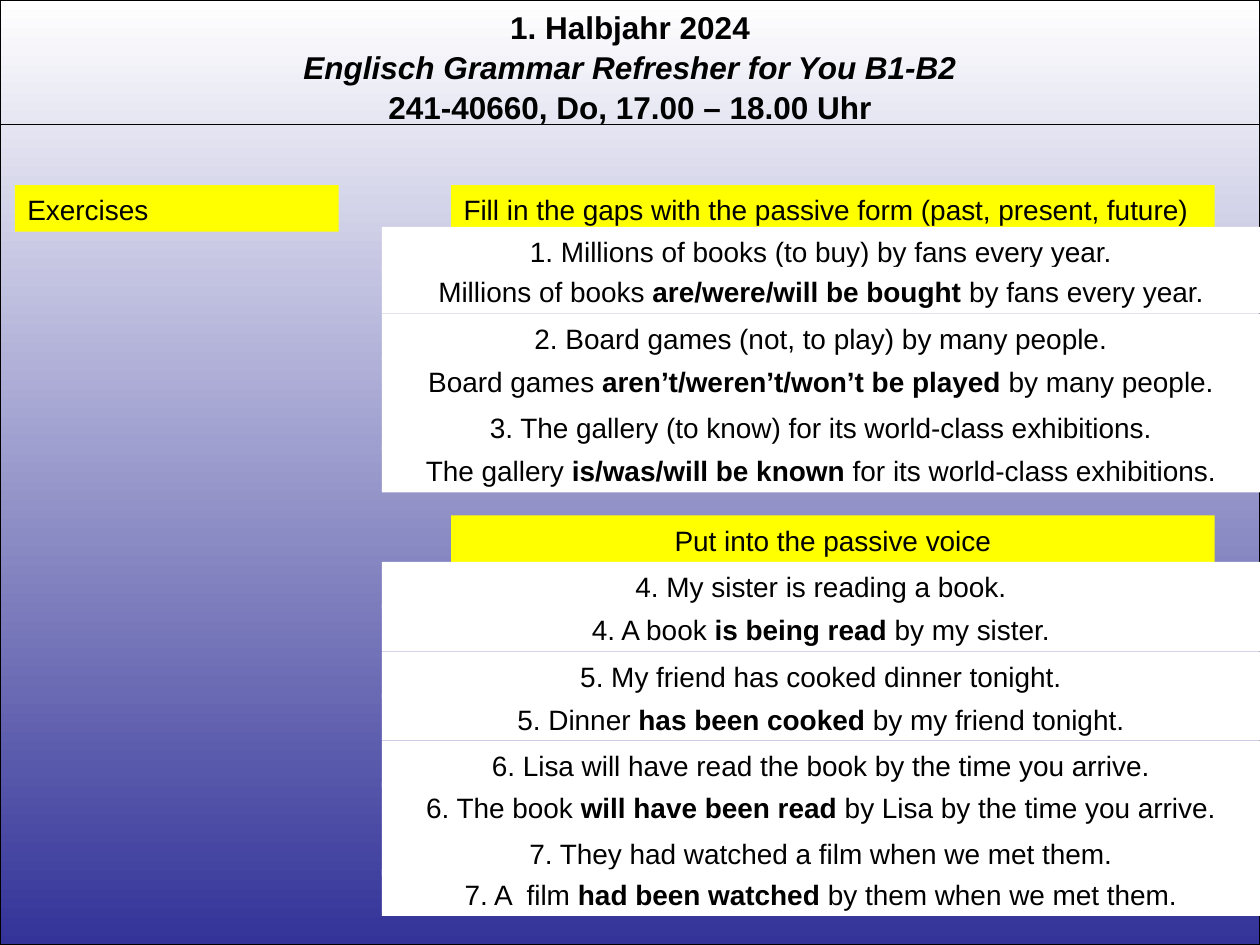
from dataclasses import dataclass
from lxml import etree
from pptx import Presentation
from pptx.dml.color import RGBColor
from pptx.enum.shapes import MSO_CONNECTOR, MSO_SHAPE
from pptx.enum.text import MSO_ANCHOR, MSO_AUTO_SIZE, PP_ALIGN
from pptx.oxml.ns import qn
from pptx.util import Pt

LEFT, CENTER = PP_ALIGN.LEFT, PP_ALIGN.CENTER
TOP = MSO_ANCHOR.TOP
GROW = MSO_AUTO_SIZE.SHAPE_TO_FIT_TEXT
RECT = MSO_SHAPE.RECTANGLE
STRAIGHT = MSO_CONNECTOR.STRAIGHT


@dataclass(frozen=True)
class Theme:
    font: str = "Arial"
    title_size: int = 18
    body_size: int = 16
    spacing: float = 1.05
    black: RGBColor = RGBColor(0, 0, 0)
    white: RGBColor = RGBColor(255, 255, 255)
    yellow: RGBColor = RGBColor(255, 255, 0)
    indigo: RGBColor = RGBColor(0x33, 0x33, 0x99)


theme = Theme()
W, H = 720, 540
ROW_H = 26.6


def add_text(p, text, size=theme.body_size, bold=False, italic=False, align=CENTER):
    p.alignment = align
    p.line_spacing = theme.spacing
    p.space_before = p.space_after = Pt(0)
    r = p.add_run()
    r.text = text
    r.font.name = theme.font
    r.font.size = Pt(size)
    r.font.bold = bold
    r.font.italic = italic
    r.font.color.rgb = theme.black


def add_bar(left, top, width, fill, parts, align=CENTER):
    sp = slide.shapes.add_shape(RECT, Pt(left), Pt(top), Pt(width), Pt(ROW_H))
    sp.shadow.inherit = False
    sp.fill.solid()
    sp.fill.fore_color.rgb = fill
    sp.line.fill.background()
    tf = sp.text_frame
    tf.word_wrap = True
    tf.auto_size = GROW
    tf.vertical_anchor = TOP
    for i, text in enumerate(parts):
        add_text(tf.paragraphs[0], text, bold=i == 1, align=align)


prs = Presentation()
prs.slide_width, prs.slide_height = Pt(W), Pt(H)
slide = prs.slides.add_slide(prs.slide_layouts[5])

backdrop = slide.shapes.add_shape(RECT, 0, 0, Pt(W), Pt(H))
backdrop.shadow.inherit = False
backdrop.fill.gradient()
backdrop.fill.gradient_angle = 270
for stop, position, color in zip(backdrop.fill.gradient_stops, (0, 1), (theme.white, theme.indigo)):
    stop.position = position
    stop.color.rgb = color
backdrop.line.color.rgb = theme.black
backdrop.line.width = Pt(0.75)

title = slide.shapes.title
backdrop._element.addnext(title._element)
title.left, title.top, title.width, title.height = 0, 0, Pt(W), Pt(72.7)
tf = title.text_frame
tf.word_wrap = True
tf.auto_size = GROW
tf.vertical_anchor = TOP
title_lines = [
    "1. Halbjahr 2024",
    "Englisch Grammar Refresher for You B1-B2",
    "241-40660, Do, 17.00 – 18.00 Uhr",
]
for i, text in enumerate(title_lines):
    p = tf.paragraphs[0] if i == 0 else tf.add_paragraph()
    add_text(p, text, size=theme.title_size, bold=True, italic=i == 1)

rule = slide.shapes.add_connector(STRAIGHT, 0, Pt(71.3), Pt(W), Pt(71.3))
rule.line.color.rgb = theme.black
rule.line.width = Pt(0.75)
etree.SubElement(rule._element.spPr, qn("a:effectLst"))

headings = [
    (8.6, 105.8, 185, "Exercises", LEFT),
    (257.8, 105.8, 436.3, "Fill in the gaps with the passive form (past, present, future)", LEFT),
    (257.8, 294.5, 436.3, "Put into the passive voice", CENTER),
]
for left, top, width, text, align in headings:
    add_bar(left, top, width, theme.yellow, [text], align)

exercises = [
    (129.6, 152.6, "1. Millions of books (to buy) by fans every year.",
     ("Millions of books ", "are/were/will be bought ", "by fans every year.")),
    (179.3, 203.8, "2. Board games (not, to play) by many people.",
     ("Board games ", "aren’t/weren’t/won’t be played ", "by many people.")),
    (230.4, 254.9, "3. The gallery (to know) for its world-class exhibitions.",
     ("The gallery ", "is/was/will be known ", "for its world-class exhibitions.")),
    (321.1, 345.6, "4. My sister is reading a book.",
     ("4. A book ", "is being read ", "by my sister.")),
    (372.2, 396.7, "5. My friend has cooked dinner tonight.",
     ("5. Dinner ", "has been cooked ", "by my friend tonight.")),
    (423.4, 447.1, "6. Lisa will have read the book by the time you arrive.",
     ("6. The book ", "will have been read ", "by Lisa by the time you arrive.")),
    (473.8, 496.8, "7. They had watched a film when we met them.",
     ("7. A  film ", "had been watched ", "by them when we met them.")),
]
for question_top, answer_top, question, answer in exercises:
    for top, parts in ((question_top, [question]), (answer_top, answer)):
        add_bar(218.2, top, W - 218.2, theme.white, parts)

prs.save("out.pptx")
